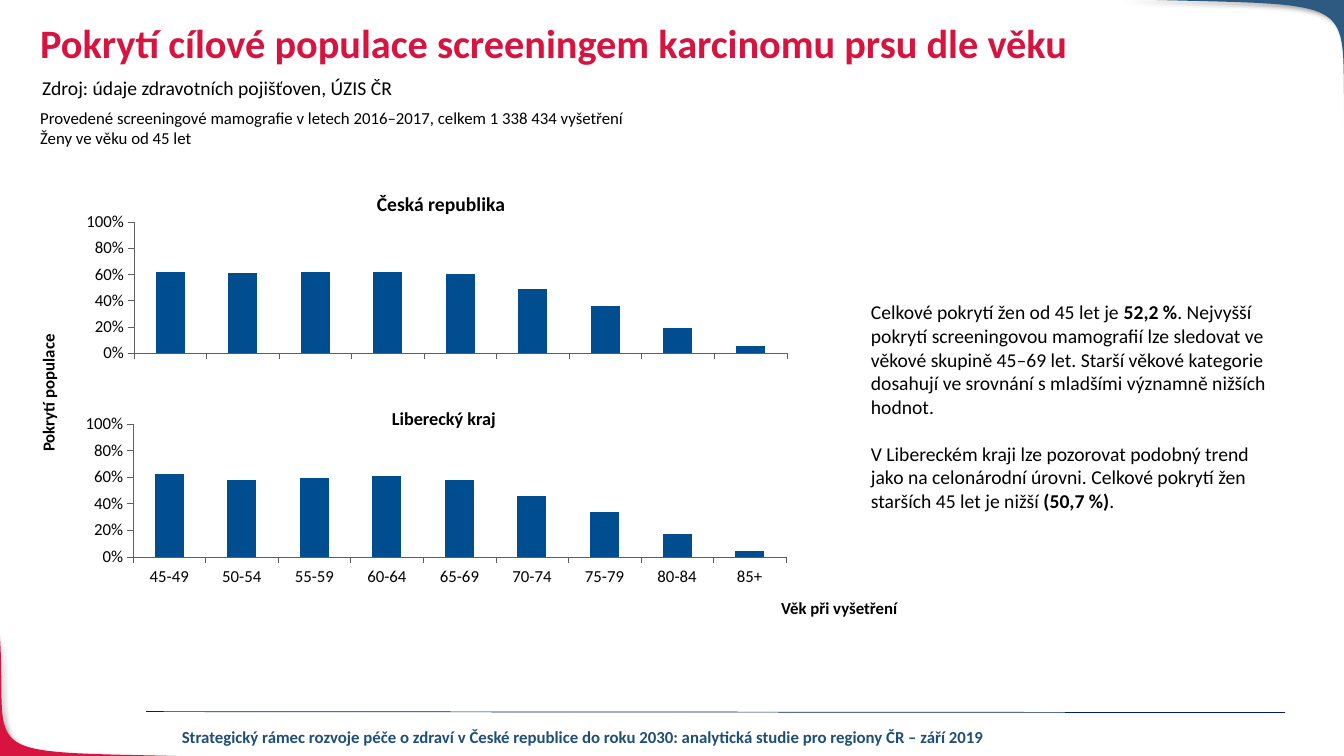
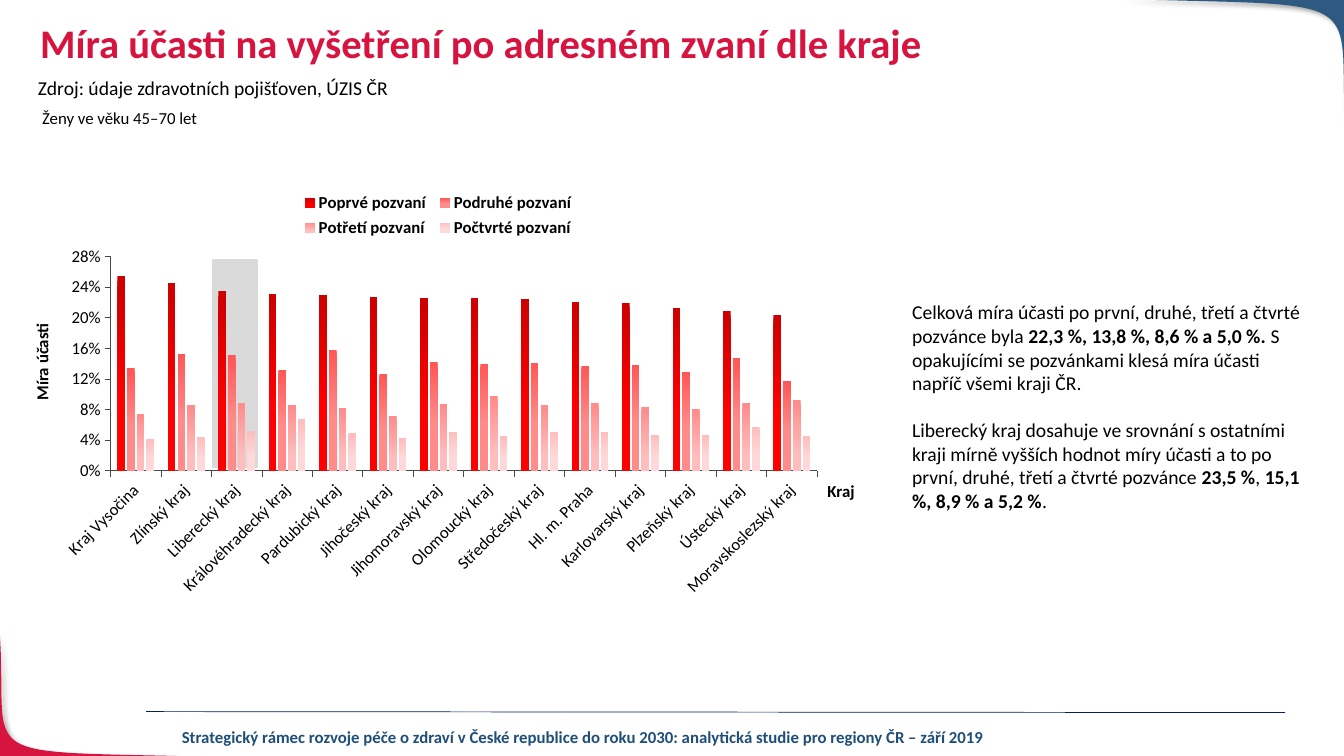
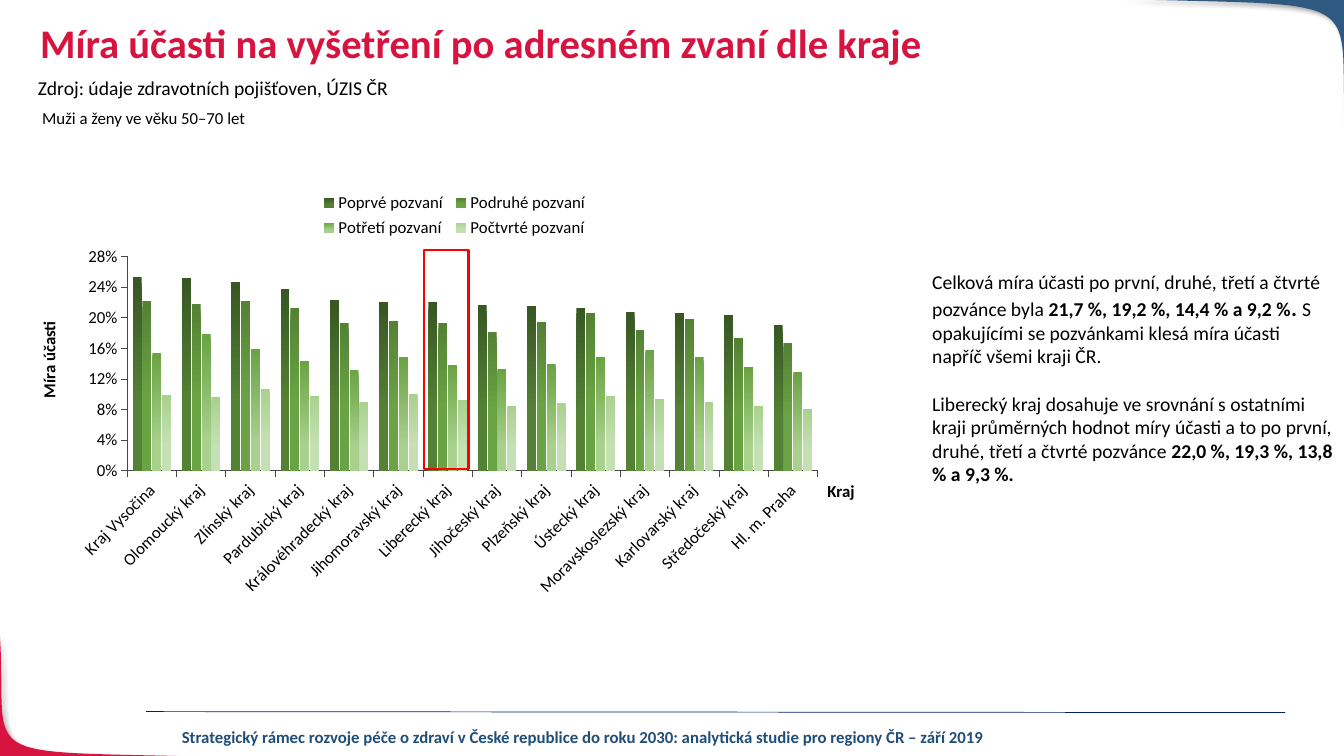
from lxml import etree
from pptx import Presentation
from pptx.chart.data import CategoryChartData
from pptx.dml.color import RGBColor
from pptx.enum.chart import XL_CHART_TYPE as ChartType
from pptx.enum.chart import XL_LEGEND_POSITION as LegendPosition
from pptx.enum.chart import XL_TICK_LABEL_POSITION as LabelPosition
from pptx.enum.chart import XL_TICK_MARK as TickMark
from pptx.enum.shapes import MSO_CONNECTOR as Connector
from pptx.enum.shapes import MSO_SHAPE as ShapeType
from pptx.enum.text import PP_ALIGN as Align
from pptx.oxml import parse_xml
from pptx.oxml.ns import nsdecls, qn
from pptx.util import Pt

BLACK = RGBColor(0x00, 0x00, 0x00)
CRIMSON = RGBColor(0xD7, 0x14, 0x40)
STEEL = RGBColor(0x2E, 0x59, 0x80)
NAVY = RGBColor(0x00, 0x20, 0x60)
FOOTER_BLUE = RGBColor(0x1F, 0x4E, 0x79)
BAR_BLUE = RGBColor(0x00, 0x4E, 0x8F)
AXIS_GRAY = RGBColor(0x5F, 0x5F, 0x5F)
AXIS_DARK = RGBColor(0x47, 0x47, 0x47)
HIGHLIGHT_GRAY = RGBColor(0xDA, 0xDA, 0xDA)
HIGHLIGHT_RED = RGBColor(0xFF, 0x00, 0x00)
# Each series fades from one shade to the next
REDS = [RGBColor.from_string(shade) for shade in
        ("CC0000", "FF0000", "FF5757", "FF8B8B", "FF8B8B", "FFBDBD", "FFBDBD", "FFD9D9")]
GREENS = [RGBColor.from_string(shade) for shade in
          ("385723", "548235", "548235", "6AA343", "6AA343", "A9D18E", "A9D18E", "C5E0B4")]
FADE_ENDS = (0.65, 0.57, 0.78, 0.66)

FONT = "Calibri"
BOLD = {"bold": True}
FOOTER = ("Strategický rámec rozvoje péče o zdraví v České republice do roku 2030: "
          "analytická studie pro regiony ČR – září 2019")
SOURCE = "Zdroj: údaje zdravotních pojišťoven, ÚZIS ČR"
SHADOW = (f'<a:outerShdw {nsdecls("a")} blurRad="50800" dist="38100" dir="2700000">'
          '<a:srgbClr val="000000"><a:alpha val="40000"/></a:srgbClr></a:outerShdw>')
CLEAR = f'<c:spPr {nsdecls("c", "a")}><a:noFill/><a:ln><a:noFill/></a:ln></c:spPr>'

INVITATIONS = ("Poprvé pozvaní", "Podruhé pozvaní", "Potřetí pozvaní", "Počtvrté pozvaní")
AGES = ("45-49", "50-54", "55-59", "60-64", "65-69", "70-74", "75-79", "80-84", "85+")


def style_font(font, size=12, bold=False, color=BLACK):
    font.name, font.size, font.bold = FONT, Pt(size), bold
    font.color.rgb = color


def add_run(paragraph, text, **font_format):
    run = paragraph.add_run()
    run.text = text
    style_font(run.font, **font_format)


def bezier(points, steps=40):
    """Points along a cubic curve given by its four control points."""
    for step in range(steps + 1):
        t = step / steps
        weights = ((1 - t) ** 3, 3 * t * (1 - t) ** 2, 3 * t * t * (1 - t), t ** 3)
        yield tuple(Pt(sum(w * p[axis] for w, p in zip(weights, points))) for axis in (0, 1))


def set_layout(parent, index, fractions, inner=False):
    for old in parent.findall(qn("c:layout")):
        parent.remove(old)
    layout = etree.Element(qn("c:layout"))
    manual = etree.SubElement(layout, qn("c:manualLayout"))
    settings = [("layoutTarget", "inner")] if inner else []
    settings += [("xMode", "edge"), ("yMode", "edge"), *zip("xywh", fractions)]
    for tag, value in settings:
        etree.SubElement(manual, qn(f"c:{tag}")).set("val", str(value))
    parent.insert(index, layout)


class Deck:
    def __init__(self):
        self.presentation = Presentation()
        self.presentation.slide_width = Pt(960)
        self.presentation.slide_height = Pt(540)
        self.slide = None

    def new_slide(self, title, title_size=29, source_left=20):
        self.slide = self.presentation.slides.add_slide(self.presentation.slide_layouts[6])
        # Corners, rule and footer
        self.corner(((153.4, 540.7), (-24.5, 535.7), (5.8, 546.5), (0, 453.6)),
                    (-0.7, 540.7), CRIMSON)
        self.corner(((799.9, -0.7), (986.4, 5), (954.7, -7.2), (961.2, 102.2)),
                    (961.2, -0.7), STEEL)
        self.line((104.4, 508.3), (918, 509), NAVY)
        self.text((113, 515.5, 607, 21.6), FOOTER, align=Align.CENTER, bold=True,
                  color=FOOTER_BLUE)
        # Title and source
        self.text((21.6, 13, 828, 49.7), title, spacing=0.9, size=title_size, bold=True,
                  color=CRIMSON)
        self.text((source_left, 51, 610, 24.5), SOURCE, size=14)

    def corner(self, curve, tip, color):
        start, *points = bezier(curve)
        builder = self.slide.shapes.build_freeform(*start)
        builder.add_line_segments([*points, tuple(map(Pt, tip))], close=True)
        shape = builder.convert_to_shape()
        shape.fill.solid()
        shape.fill.fore_color.rgb = color
        shape.line.fill.background()
        shape.shadow.inherit = False
        shape.element.spPr.find(qn("a:effectLst")).append(parse_xml(SHADOW))

    def line(self, start, end, color, width=0.5):
        connector = self.slide.shapes.add_connector(
            Connector.STRAIGHT, *map(Pt, (*start, *end)))
        connector.line.color.rgb = color
        connector.line.width = Pt(width)
        etree.SubElement(connector.element.spPr, qn("a:effectLst"))

    def rectangle(self, box, line_color, width, fill=None):
        shape = self.slide.shapes.add_shape(ShapeType.RECTANGLE, *map(Pt, box))
        shape.shadow.inherit = False
        if fill is None:
            shape.fill.background()
        else:
            shape.fill.solid()
            shape.fill.fore_color.rgb = fill
        shape.line.color.rgb = line_color
        shape.line.width = Pt(width)

    def text(self, box, *paragraphs, align=Align.LEFT, spacing=None, gap=0, rotation=0,
             **font_format):
        """A paragraph is a string or a list of (text, format) runs."""
        shape = self.slide.shapes.add_textbox(*map(Pt, box))
        shape.rotation = rotation
        frame = shape.text_frame
        frame.word_wrap = True
        for index, runs in enumerate(paragraphs):
            paragraph = frame.add_paragraph() if index else frame.paragraphs[0]
            paragraph.alignment = align
            paragraph.line_spacing = spacing
            if index and gap:
                paragraph.space_before = Pt(gap)
            for text, extra in [(runs, {})] if isinstance(runs, str) else runs:
                add_run(paragraph, text, **{**font_format, **extra})

    def commentary(self, left, top, *paragraphs):
        self.text((left, top, 301, 165), *paragraphs, gap=17, size=14)

    def axis_title(self, box, text):
        self.text(box, text, align=Align.CENTER, rotation=270, bold=True)

    def column_chart(self, box, categories, series, plot_box, top, step, gap, overlap=0,
                     axis_color=AXIS_GRAY, axis_width=0.25):
        data = CategoryChartData(number_format="0%")
        data.categories = categories
        for name, values in series:
            data.add_series(name, values)
        chart = self.slide.shapes.add_chart(
            ChartType.COLUMN_CLUSTERED, *map(Pt, box), data).chart
        chart.has_title = chart.has_legend = False
        style_font(chart.font)
        for axis in (chart.category_axis, chart.value_axis):
            axis.major_tick_mark, axis.minor_tick_mark = TickMark.OUTSIDE, TickMark.NONE
            axis.format.line.color.rgb = axis_color
            axis.format.line.width = Pt(axis_width)
            axis.has_major_gridlines = False
            style_font(axis.tick_labels.font)
        axis = chart.value_axis
        axis.minimum_scale, axis.maximum_scale, axis.major_unit = 0, top, step
        axis.tick_labels.number_format = "0%"
        axis.tick_labels.number_format_is_linked = False
        plot = chart.plots[0]
        plot.gap_width, plot.overlap, plot.vary_by_categories = gap, overlap, False
        # Clear background and fixed plot area
        plot_area = chart.element.find(".//" + qn("c:plotArea"))
        set_layout(plot_area, 0, plot_box, inner=True)
        plot_area.append(parse_xml(CLEAR))
        chart.element.find(qn("c:chart")).addnext(parse_xml(CLEAR))
        return chart

    def coverage_chart(self, box, values, plot_box, labels=True):
        chart = self.column_chart(box, AGES, [("Pokrytí populace", values)], plot_box,
                                  top=1, step=0.2, gap=150)
        fill = chart.plots[0].series[0].format.fill
        fill.solid()
        fill.fore_color.rgb = BAR_BLUE
        if not labels:
            chart.category_axis.tick_label_position = LabelPosition.NONE

    def invitation_chart(self, box, regions, rates, shades, gap, overlap, legend_left,
                         legend_bold=False):
        chart = self.column_chart(box, regions, zip(INVITATIONS, rates),
                                  (0.083, 0.18, 0.9, 0.443), top=0.28, step=0.04, gap=gap,
                                  overlap=overlap, axis_color=AXIS_DARK, axis_width=0.5)
        category_axis = chart.element.find(".//" + qn("c:catAx"))
        category_axis.find(".//" + qn("a:bodyPr")).set("rot", "-2700000")
        # Fading bars
        for index, series in enumerate(chart.plots[0].series):
            fill = series.format.fill
            fill.gradient()
            fill.gradient_angle = 270
            for stop, shade, position in zip(fill.gradient_stops, shades[2 * index:],
                                             (0, FADE_ENDS[index])):
                stop.color.rgb = shade
                stop.position = position
        # Legend in two rows
        chart.has_legend = True
        chart.legend.position = LegendPosition.BOTTOM
        chart.legend.include_in_layout = False
        style_font(chart.legend.font, bold=legend_bold)
        set_layout(chart.element.find(".//" + qn("c:legend")), 1,
                   (legend_left, 0.04, 0.36, 0.11))
        self.text((584, 340, 78, 20), "Kraj", bold=True)


def coverage_slide(deck):
    deck.new_slide("Pokrytí cílové populace screeningem karcinomu prsu dle věku",
                   title_size=28.8, source_left=23)
    deck.text((21.6, 73.4, 528, 36),
              "Provedené screeningové mamografie v letech 2016–2017, celkem 1 338 434 vyšetření",
              "Ženy ve věku od 45 let")
    deck.coverage_chart((39.6, 146.2, 538.6, 156.2),
                        (0.62, 0.61, 0.62, 0.62, 0.6, 0.49, 0.36, 0.19, 0.05),
                        (0.104, 0.079, 0.866, 0.6), labels=False)
    deck.coverage_chart((33.1, 285.8, 568.1, 164.9),
                        (0.62, 0.58, 0.59, 0.61, 0.58, 0.46, 0.34, 0.17, 0.04),
                        (0.109, 0.103, 0.821, 0.576))
    deck.text((0, 133.2, 630, 24.5), "Česká republika", align=Align.CENTER, size=14, bold=True)
    deck.text((2, 287.3, 630, 23), "Liberecký kraj", align=Align.CENTER, size=13, bold=True)
    deck.axis_title((-41, 267.8, 154.8, 26), "Pokrytí populace")
    deck.text((550.8, 423.4, 101.5, 20), "Věk při vyšetření", bold=True)
    deck.commentary(
        615, 211,
        [("Celkové pokrytí žen od 45 let je ", {}), ("52,2 %", BOLD),
         (". Nejvyšší pokrytí screeningovou mamografií lze sledovat ve věkové skupině "
          "45–69 let. Starší věkové kategorie dosahují ve srovnání s mladšími významně "
          "nižších hodnot.", {})],
        [("V Libereckém kraji lze pozorovat podobný trend jako na celonárodní úrovni. "
          "Celkové pokrytí žen starších 45 let je nižší ", {}), ("(50,7 %)", BOLD), (".", {})])


INVITED_INTRO = "Celková míra účasti po první, druhé, třetí a čtvrté pozvánce byla "
INVITED_TREND = "S opakujícími se pozvánkami klesá míra účasti napříč všemi kraji ČR."
INVITED_TITLE = "Míra účasti na vyšetření po adresném zvaní dle kraje"


def women_slide(deck):
    deck.new_slide(INVITED_TITLE)
    deck.text((23, 73.4, 528, 21.6), "Ženy ve věku 45–70 let")
    deck.rectangle((152, 185.8, 31.7, 148.3), HIGHLIGHT_GRAY, 1, fill=HIGHLIGHT_GRAY)
    deck.invitation_chart(
        (32.4, 121, 560.9, 345.6),
        ("Kraj Vysočina", "Zlínský kraj", "Liberecký kraj", "Královéhradecký kraj",
         "Pardubický kraj", "Jihočeský kraj", "Jihomoravský kraj", "Olomoucký kraj",
         "Středočeský kraj", "Hl. m. Praha", "Karlovarský kraj", "Plzeňský kraj",
         "Ústecký kraj", "Moravskoslezský kraj"),
        ((0.254, 0.245, 0.235, 0.231, 0.23, 0.227, 0.226,
          0.226, 0.225, 0.22, 0.219, 0.212, 0.209, 0.203),
         (0.134, 0.152, 0.151, 0.132, 0.158, 0.127, 0.142,
          0.14, 0.141, 0.137, 0.138, 0.129, 0.147, 0.117),
         (0.074, 0.086, 0.089, 0.086, 0.082, 0.071, 0.087,
          0.098, 0.086, 0.088, 0.083, 0.081, 0.088, 0.092),
         (0.041, 0.044, 0.052, 0.067, 0.049, 0.043, 0.051,
          0.045, 0.051, 0.051, 0.047, 0.047, 0.057, 0.045)),
        REDS, gap=180, overlap=-27, legend_left=0.32, legend_bold=True)
    deck.axis_title((-49, 245.5, 162, 26), "Míra účasti")
    deck.commentary(
        644.4, 211,
        [(INVITED_INTRO, {}), ("22,3 %, 13,8 %, 8,6 % a 5,0 %. ", BOLD), (INVITED_TREND, {})],
        [("Liberecký kraj dosahuje ve srovnání s ostatními kraji mírně vyšších hodnot míry "
          "účasti a to po první, druhé, třetí a čtvrté pozvánce ", {}), ("23,5 %", BOLD),
         (",", {}), (" 15,1 %, 8,9 % a 5,2 %", BOLD), (".", {})])


def men_and_women_slide(deck):
    deck.new_slide(INVITED_TITLE)
    deck.text((23, 73.4, 528, 21.6), "Muži a ženy ve věku 50–70 let")
    deck.invitation_chart(
        (45.4, 121, 547.9, 345.6),
        ("Kraj Vysočina", "Olomoucký kraj", "Zlínský kraj", "Pardubický kraj",
         "Královéhradecký kraj", "Jihomoravský kraj", "Liberecký kraj", "Jihočeský kraj",
         "Plzeňský kraj", "Ústecký kraj", "Moravskoslezský kraj", "Karlovarský kraj",
         "Středočeský kraj", "Hl. m. Praha"),
        ((0.253, 0.252, 0.247, 0.238, 0.223, 0.22, 0.22,
          0.216, 0.215, 0.213, 0.207, 0.206, 0.203, 0.191),
         (0.222, 0.218, 0.222, 0.212, 0.193, 0.196, 0.193,
          0.181, 0.194, 0.206, 0.184, 0.198, 0.173, 0.167),
         (0.154, 0.179, 0.159, 0.144, 0.132, 0.148, 0.138,
          0.133, 0.14, 0.148, 0.158, 0.148, 0.135, 0.129),
         (0.099, 0.096, 0.107, 0.098, 0.09, 0.1, 0.093,
          0.085, 0.089, 0.098, 0.094, 0.09, 0.085, 0.081)),
        GREENS, gap=120, overlap=-10, legend_left=0.33)
    deck.axis_title((-40.3, 244, 154.8, 26), "Míra účasti")
    deck.rectangle((303, 178.6, 31.7, 156.2), HIGHLIGHT_RED, 1.5)
    deck.commentary(
        658.8, 189.4,
        [(INVITED_INTRO, {}), ("21,7 %, 19,2 %, 14,4 % a 9,2 %", BOLD),
         (". ", {"bold": True, "size": 16}), (INVITED_TREND, {})],
        [("Liberecký kraj dosahuje ve srovnání s ostatními kraji průměrných hodnot míry "
          "účasti a to po první, druhé, třetí a čtvrté pozvánce ", {}),
         ("22,0 %, 19,3 %, 13,8 % a 9,3 %.", BOLD)])


def main():
    deck = Deck()
    coverage_slide(deck)
    women_slide(deck)
    men_and_women_slide(deck)
    deck.presentation.save("out.pptx")


if __name__ == "__main__":
    main()
